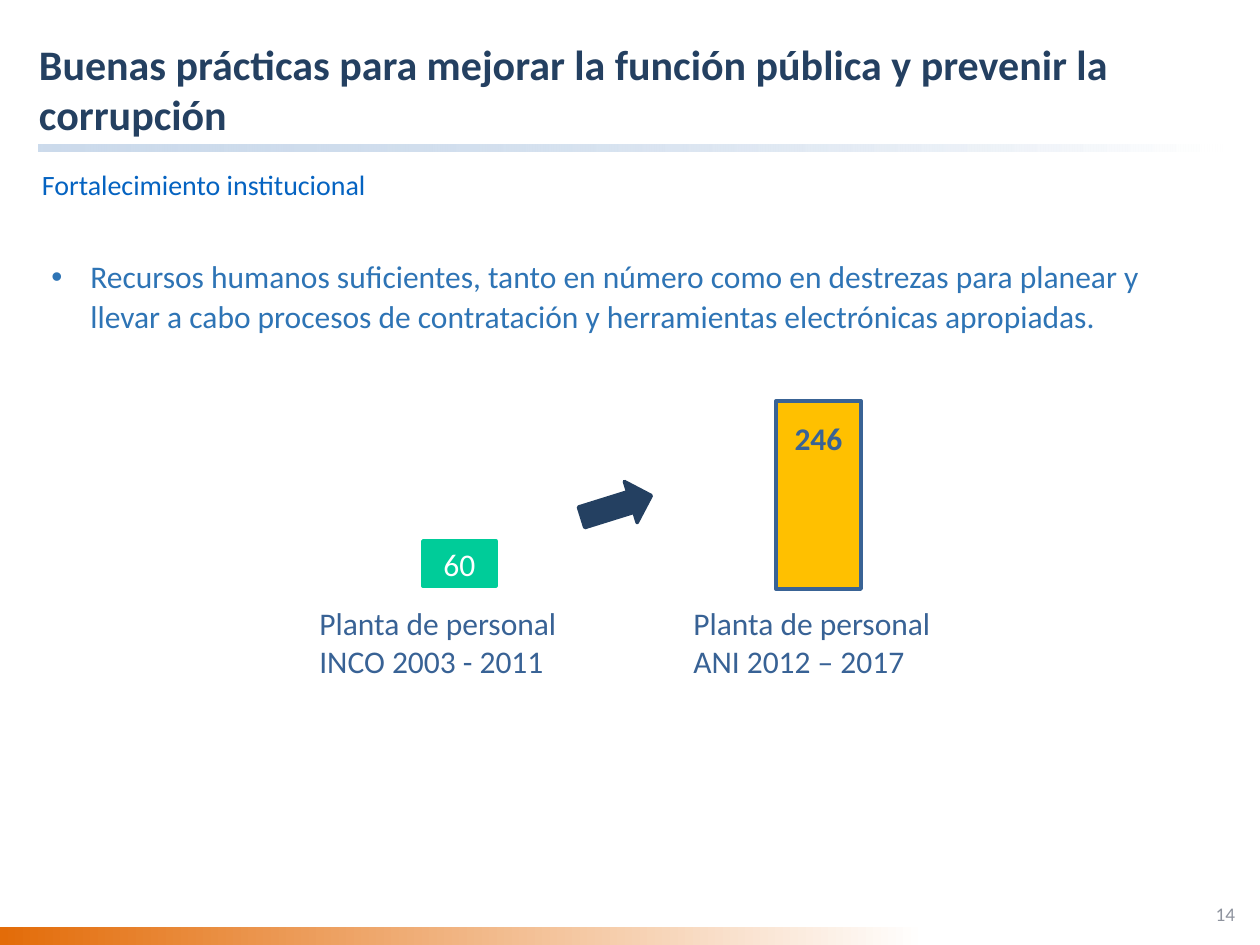
from lxml.etree import SubElement
from pptx import Presentation
from pptx.dml.color import RGBColor
from pptx.enum.shapes import MSO_SHAPE
from pptx.enum.text import MSO_ANCHOR, MSO_AUTO_SIZE, PP_ALIGN
from pptx.oxml.ns import qn
from pptx.util import Emu, Pt

FONT = "Calibri"
NAVY = "244061"
GREEN = "00CC99"
LABEL_BLUE = "386295"
BAR_BLUE = "396395"


def px(value):
    return Emu(round(value * 914400 / 126))


def color(hex_string):
    return RGBColor.from_string(hex_string)


def place(box):
    return [px(length) for length in box]


def add_bullet(para, indent):
    properties = para._p.get_or_add_pPr()
    properties.set("marL", str(px(indent)))
    properties.set("indent", str(px(-indent)))
    SubElement(properties, qn("a:buFont"), typeface="Arial")
    SubElement(properties, qn("a:buChar"), char="•")


def set_text(shape, text, size, hex_color, bold=False, align=PP_ALIGN.LEFT,
             anchor=MSO_ANCHOR.TOP, inset=None, bullet_indent=None):
    frame = shape.text_frame
    frame.word_wrap = True
    frame.auto_size = MSO_AUTO_SIZE.NONE
    frame.vertical_anchor = anchor
    if inset is not None:
        frame.margin_left = frame.margin_right = px(inset)
        frame.margin_top = frame.margin_bottom = px(inset)
    frame.text = text
    para = frame.paragraphs[0]
    if bullet_indent:
        add_bullet(para, bullet_indent)
    para.alignment = align
    para.font.name = FONT
    para.font.size = Pt(size)
    para.font.bold = bold
    para.font.color.rgb = color(hex_color)
    return para


def add_text(page, box, *args, **options):
    shape = page.shapes.add_textbox(*place(box))
    return set_text(shape, *args, **options)


def add_solid(page, kind, box, fill, line, line_width):
    shape = page.shapes.add_shape(kind, *place(box))
    shape.shadow.inherit = False
    shape.fill.solid()
    shape.fill.fore_color.rgb = color(fill)
    shape.line.color.rgb = color(line)
    shape.line.width = Pt(line_width)
    return shape


def add_fading_band(page, box, start, opacity=100):
    band = page.shapes.add_shape(MSO_SHAPE.RECTANGLE, *place(box))
    band.shadow.inherit = False
    band.line.fill.background()
    band.fill.gradient()
    band.fill.gradient_angle = 0
    for stop, shade in zip(band.fill.gradient_stops, (start, "FFFFFF")):
        stop.color.rgb = color(shade)
    if opacity < 100:
        start_color = next(band._element.iter(qn("a:srgbClr")))
        SubElement(start_color, qn("a:alpha"), val=str(opacity * 1000))


def add_header(page, left, top, width):
    # Title, rule below it and section name
    title = page.shapes.title
    title.left, title.top, title.width, title.height = place(
        (left, top, width, 103))
    set_text(title, "Buenas prácticas para mejorar la función pública y "
             "prevenir la corrupción", 24, NAVY, bold=True,
             anchor=MSO_ANCHOR.BOTTOM, inset=0)
    add_fading_band(page, (left, top + 109, width, 7), "9AB7D9", opacity=50)
    add_text(page, (left + 3, top + 132, 1124, 34),
             "Fortalecimiento institucional", 16, "0563C1", inset=0)


def add_body(page, box):
    para = add_text(page, box, "Recursos humanos suficientes, tanto en número "
                    "como en destrezas para planear y llevar a cabo procesos "
                    "de contratación y herramientas electrónicas apropiadas.",
                    18, "2E74B5", bullet_indent=39)
    para.line_spacing = 1.06


def add_staff_comparison(page, left, top):
    # Staff before
    before = add_solid(page, MSO_SHAPE.RECTANGLE,
                       (left + 116, top + 140, 73, 45), GREEN, GREEN, 2)
    set_text(before, "60", 18, "FFFFFF", align=PP_ALIGN.CENTER,
             anchor=MSO_ANCHOR.MIDDLE)

    # Staff after
    after = add_solid(page, MSO_SHAPE.RECTANGLE,
                      (left + 469, top, 85, 188), "FFC000", BAR_BLUE, 2.25)
    set_text(after, "246", 18, BAR_BLUE, bold=True, align=PP_ALIGN.CENTER)
    after.text_frame.margin_top = px(18)

    # Arrow between the bars
    arrow = add_solid(page, MSO_SHAPE.RIGHT_ARROW,
                      (left + 273, top + 84, 73, 43), NAVY, NAVY, 2)
    arrow.rotation = 342.7

    # Labels under the bars
    labels = ["Planta de personal INCO 2003 - 2011",
              "Planta de personal ANI 2012 – 2017"]
    for index, label in enumerate(labels):
        add_text(page, (left + 374 * index, top + 197, 305, 90),
                 label, 18, LABEL_BLUE)


def add_footer(page, top):
    add_fading_band(page, (0, top, 926, 18), "E36C09")
    add_text(page, (1196, top - 38, 59, 50), "14", 11, "8E939E",
             align=PP_ALIGN.CENTER, anchor=MSO_ANCHOR.MIDDLE)


def main():
    deck = Presentation()
    deck.slide_width, deck.slide_height = px(1260), px(945)
    page = deck.slides.add_slide(deck.slide_layouts[5])
    add_header(page, 39, 36, 1184)
    add_body(page, (39, 249, 1155, 92))
    add_staff_comparison(page, 307, 401)
    add_footer(page, 927)
    deck.save("out.pptx")


if __name__ == "__main__":
    main()
